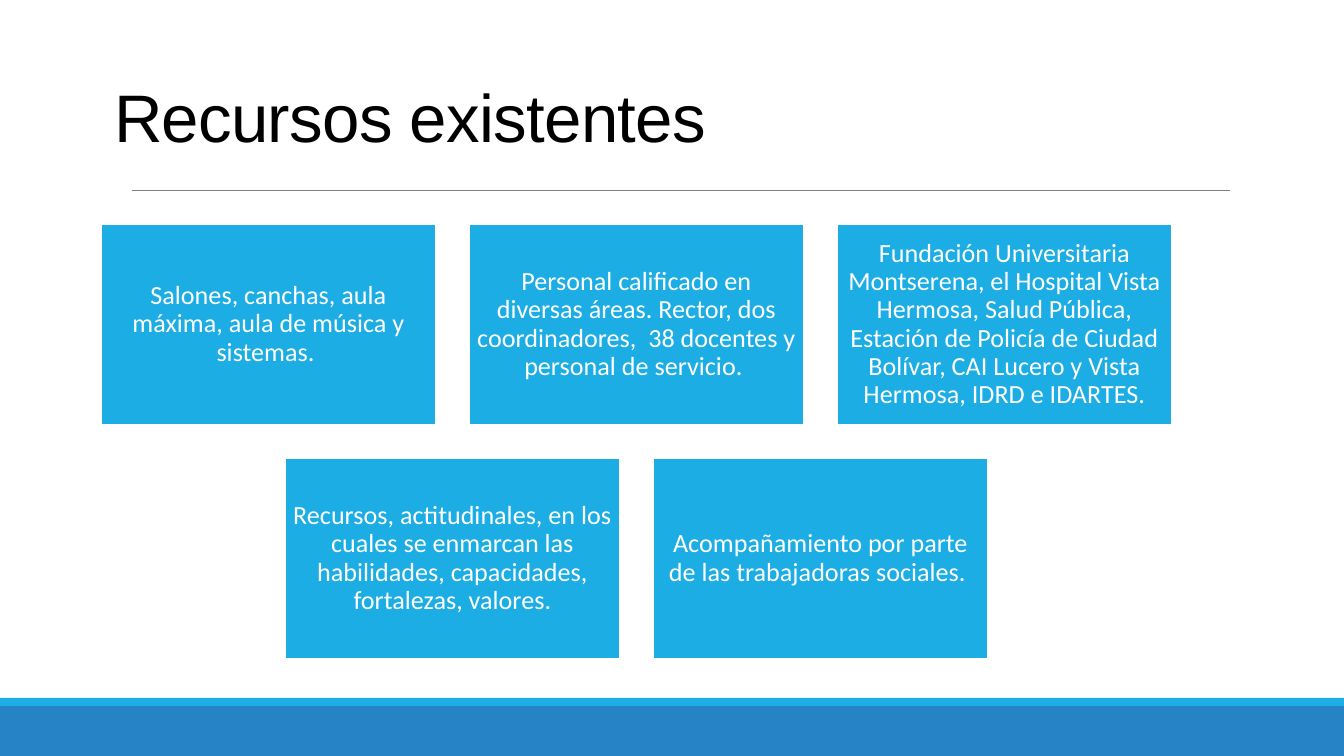
from lxml import etree
from pptx import Presentation
from pptx.dml.color import RGBColor
from pptx.enum.shapes import MSO_CONNECTOR, MSO_SHAPE
from pptx.enum.text import MSO_ANCHOR, MSO_AUTO_SIZE, PP_ALIGN
from pptx.oxml.ns import qn
from pptx.util import Emu, Pt

RECTANGLE = MSO_SHAPE.RECTANGLE
STRAIGHT = MSO_CONNECTOR.STRAIGHT
MIDDLE, BOTTOM = MSO_ANCHOR.MIDDLE, MSO_ANCHOR.BOTTOM
LEFT, CENTER = PP_ALIGN.LEFT, PP_ALIGN.CENTER
NO_AUTOFIT = MSO_AUTO_SIZE.NONE

BLACK = RGBColor(0x00, 0x00, 0x00)
WHITE = RGBColor(0xFF, 0xFF, 0xFF)
GRAY = RGBColor(0x80, 0x80, 0x80)
SKY = RGBColor(0x1C, 0xAD, 0xE4)
BLUE = RGBColor(0x26, 0x83, 0xC6)

SLIDE_WIDTH, SLIDE_HEIGHT = 1344, 756
EMU_PER_PX = 9144000 / SLIDE_WIDTH
TITLE_ONLY = 5

RESOURCE_ROWS = [
    [
        "Salones, canchas, aula máxima, aula de música y sistemas. ",
        "Personal calificado en diversas áreas. Rector, dos coordinadores,  38 docentes y personal de servicio. ",
        "Fundación Universitaria Montserena, el Hospital Vista Hermosa, Salud Pública, Estación de Policía de "
        "Ciudad Bolívar, CAI Lucero y Vista Hermosa, IDRD e IDARTES.",
    ],
    [
        "Recursos, actitudinales, en los cuales se enmarcan las habilidades, capacidades, fortalezas, valores.",
        "Acompañamiento por parte de las trabajadoras sociales. ",
    ],
]


def px(length):
    return Emu(round(length * EMU_PER_PX))


def write_text(shape, text, *, font, size, color, align, anchor, line_spacing, insets, tracking=0):
    frame = shape.text_frame
    frame.word_wrap = True
    frame.auto_size = NO_AUTOFIT
    frame.vertical_anchor = anchor
    horizontal, vertical = insets
    frame.margin_left = frame.margin_right = px(horizontal)
    frame.margin_top = frame.margin_bottom = px(vertical)
    paragraph = frame.paragraphs[0]
    paragraph.alignment = align
    paragraph.line_spacing = line_spacing
    run = paragraph.add_run()
    run.text = text
    run.font.name = font
    run.font.size = Pt(size)
    run.font.color.rgb = color
    if tracking:
        run.font._element.set("spc", str(round(tracking * 100)))


def add_rectangle(slide, left, top, width, height, fill, outline=None):
    shape = slide.shapes.add_shape(RECTANGLE, px(left), px(top), px(width), px(height))
    shape.shadow.inherit = False
    shape.fill.solid()
    shape.fill.fore_color.rgb = fill
    if outline is None:
        shape.line.fill.background()
    else:
        shape.line.color.rgb = outline
        shape.line.width = Pt(1.25)
    return shape


def add_footer_band(slide, left, top, width, height):
    stripe_height = 8
    add_rectangle(slide, left, top + stripe_height, width, height - stripe_height, BLUE)
    add_rectangle(slide, left, top, width, stripe_height, SKY)


def add_header(slide, left, top, width, height):
    rule_top = px(top + height + 28)
    rule = slide.shapes.add_connector(STRAIGHT, px(left + 31), rule_top, px(left + width + 20), rule_top)
    rule.line.color.rgb = GRAY
    rule.line.width = Pt(0.5)
    etree.SubElement(rule._element.spPr, qn("a:effectLst"))

    title = slide.shapes.title
    title.left, title.top, title.width, title.height = map(px, (left, top, width, height))
    write_text(title, "Recursos existentes", font="Arial", size=36, color=BLACK, align=LEFT,
               anchor=BOTTOM, line_spacing=0.85, insets=(13, 7), tracking=-0.4)


def add_resource_grid(slide, left, top, width, height):
    gap = 33
    columns = max(len(row) for row in RESOURCE_ROWS)
    rows = len(RESOURCE_ROWS)
    card_width = (width - gap * (columns - 1)) / columns
    card_height = (height - gap * (rows - 1)) / rows
    for row_index, texts in enumerate(RESOURCE_ROWS):
        row_width = len(texts) * (card_width + gap) - gap
        row_left = left + (width - row_width) / 2
        card_top = top + row_index * (card_height + gap)
        for column, text in enumerate(texts):
            card_left = row_left + column * (card_width + gap)
            card = add_rectangle(slide, card_left, card_top, card_width, card_height, SKY, WHITE)
            write_text(card, text, font="Calibri", size=14, color=WHITE, align=CENTER,
                       anchor=MIDDLE, line_spacing=0.9, insets=(8, 8))


def main():
    presentation = Presentation()
    presentation.slide_width = px(SLIDE_WIDTH)
    presentation.slide_height = px(SLIDE_HEIGHT)
    slide = presentation.slides.add_slide(presentation.slide_layouts[TITLE_ONLY])
    add_footer_band(slide, 0, 698, SLIDE_WIDTH, 58)
    add_header(slide, 101, 50, 1109, 113)
    add_resource_grid(slide, 101, 224, 1071, 435)
    presentation.save("out.pptx")


if __name__ == "__main__":
    main()
